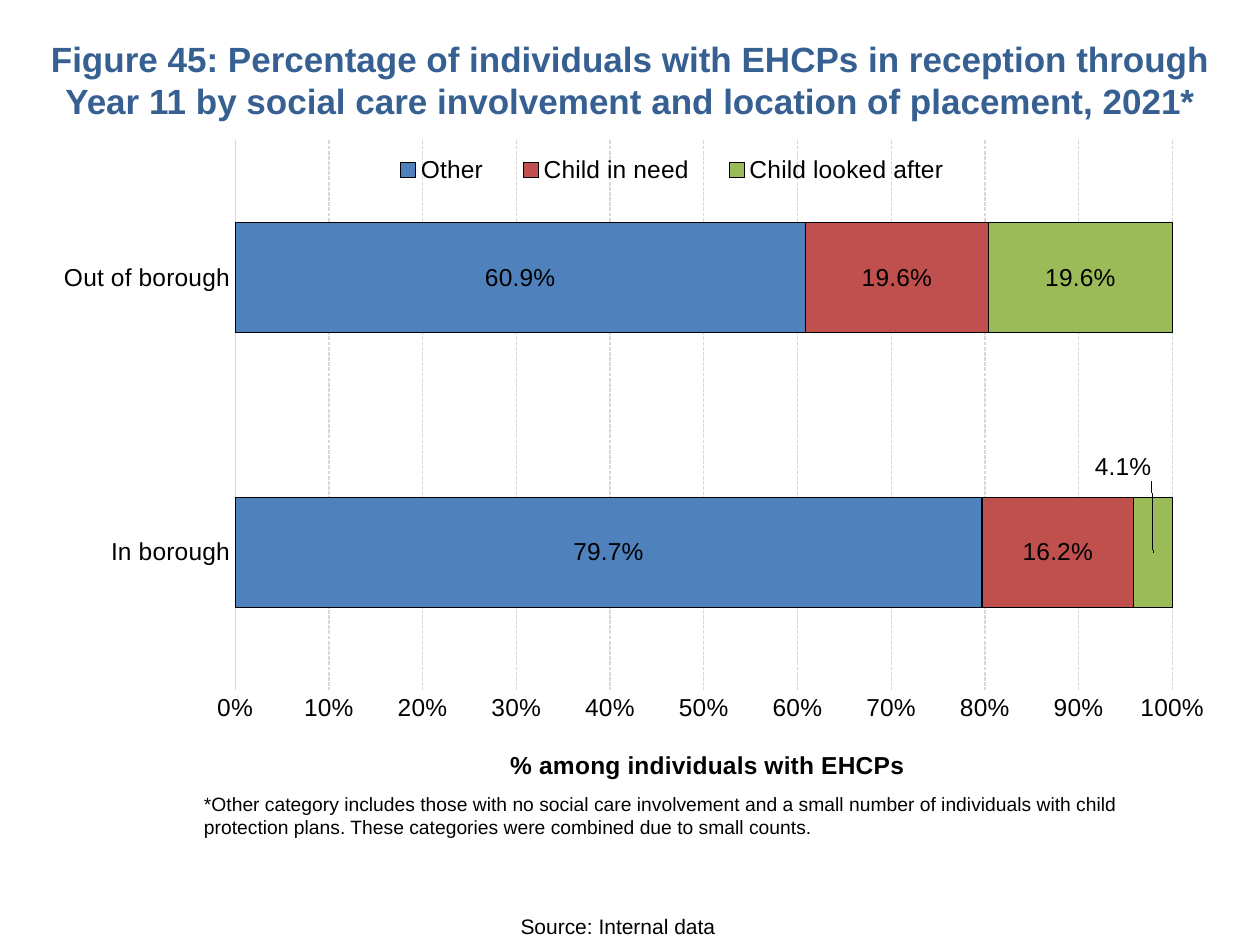
from lxml import etree
from pptx import Presentation
from pptx.chart.data import CategoryChartData
from pptx.dml.color import RGBColor
from pptx.enum.chart import (XL_CHART_TYPE, XL_LABEL_POSITION,
                             XL_LEGEND_POSITION, XL_TICK_MARK)
from pptx.enum.dml import MSO_LINE
from pptx.enum.text import MSO_ANCHOR, PP_ALIGN
from pptx.oxml.ns import qn
from pptx.util import Inches, Pt

STACKED = XL_CHART_TYPE.BAR_STACKED_100
CENTER = XL_LABEL_POSITION.CENTER
TOP = XL_LEGEND_POSITION.TOP
NONE = XL_TICK_MARK.NONE
DASH = MSO_LINE.SQUARE_DOT
MIDDLE, UPPER = MSO_ANCHOR.MIDDLE, MSO_ANCHOR.TOP
MID, LEFT = PP_ALIGN.CENTER, PP_ALIGN.LEFT


def style(font, size, color="000000", bold=False):
    values = {"name": "Arial", "size": Pt(size), "bold": bold}
    for key, value in values.items():
        setattr(font, key, value)
    font.color.rgb = RGBColor.from_string(color)


def place(part, index, **values):
    """Give a chart part a manual layout, as fractions of the chart."""
    for old in part.findall(qn("c:layout")):
        part.remove(old)
    layout = etree.Element(qn("c:layout"))
    manual = etree.SubElement(layout, qn("c:manualLayout"))
    for key, value in values.items():
        etree.SubElement(manual, qn("c:" + key), val=str(value))
    part.insert(index, layout)


deck = Presentation()
deck.slide_width, deck.slide_height = Inches(10), Inches(7.5)
slide = deck.slides.add_slide(deck.slide_layouts[5])

# Title
title = slide.shapes.title
box = {"left": 0.28, "top": 0.25, "width": 9.45, "height": 0.76}
for key, value in box.items():
    setattr(title, key, Inches(value))
frame = title.text_frame
frame.text = ("Figure 45: Percentage of individuals with EHCPs in reception "
              "through Year 11 by social care involvement and location of "
              "placement, 2021*")
frame.vertical_anchor = MIDDLE
frame.paragraphs[0].alignment = MID
style(frame.paragraphs[0].runs[0].font, 20, "376092", True)

# Source and footnote
notes = [
    ("Source: Internal data", (3.22, 7.2, 3.37, 0.3), 12, MID, MIDDLE),
    ("*Other category includes those with no social care involvement and a "
     "small number of individuals with child protection plans. These "
     "categories were combined due to small counts.",
     (1.52, 6.24, 7.62, 0.47), 11, LEFT, UPPER),
]
for text, area, size, align, anchor in notes:
    frame = slide.shapes.add_textbox(*map(Inches, area)).text_frame
    frame.word_wrap = True
    frame.vertical_anchor = anchor
    frame.text = text
    frame.paragraphs[0].alignment = align
    style(frame.paragraphs[0].runs[0].font, size)

# Chart data
groups = [("Other", (0.797, 0.609), "4F81BD"),
          ("Child in need", (0.162, 0.196), "C0504D"),
          ("Child looked after", (0.041, 0.196), "9BBB59")]
data = CategoryChartData(number_format="0.0%")
data.categories = ["In borough", "Out of borough"]
for name, values, color in groups:
    data.add_series(name, values)
area = map(Inches, (0.28, 0.95, 9.45, 5.31))
chart = slide.shapes.add_chart(STACKED, *area, data).chart
root = chart.element if hasattr(chart, "element") else chart._chartSpace
style(chart.font, 10)
chart.has_title = False
plot = chart.plots[0]
plot.gap_width, plot.overlap = 150, 100
plot.vary_by_categories = False
place(root.xpath("c:chart/c:plotArea")[0], 0, layoutTarget="inner",
      xMode="edge", yMode="edge", x=0.168, y=0.031, w=0.787, h=0.821)

# Bars and their labels
for bars, (name, values, color) in zip(plot.series, groups):
    bars.format.fill.solid()
    bars.format.fill.fore_color.rgb = RGBColor.from_string(color)
    bars.format.line.color.rgb = RGBColor.from_string("000000")
    bars.format.line.width = Pt(0.75)
    labels = bars.data_labels
    form = {"show_value": True, "position": CENTER, "number_format": "0.0%",
            "number_format_is_linked": False}
    for key, value in form.items():
        setattr(labels, key, value)
    style(labels.font, 14)

# The narrow bar has its label above it
label = plot.series[2].points[0].data_label
style(label.font, 14)
label.position = CENTER
mark = root.xpath(".//c:dLbl")[0]
mark.insert(1, etree.Element(qn("c:numFmt"), formatCode="0.0%",
                             sourceLinked="0"))
place(mark, 1, x=-0.025, y=-0.127)

# Axes
side, base = chart.category_axis, chart.value_axis
for axis in (side, base):
    axis.major_tick_mark = axis.minor_tick_mark = NONE
    style(axis.tick_labels.font, 14)
base.minimum_scale, base.maximum_scale, base.major_unit = 0, 1, 0.1
base.tick_labels.number_format = "0%"
base.tick_labels.number_format_is_linked = False
base.has_major_gridlines = True
grid = base.major_gridlines.format.line
for line in (side.format.line, grid):
    line.color.rgb = RGBColor.from_string("D9D9D9")
    line.width = Pt(0.75)
grid.dash_style = DASH
base.format.line.fill.background()

# Axis title
frame = base.axis_title.text_frame
frame.text = "% among individuals with EHCPs"
style(frame.paragraphs[0].runs[0].font, 14, bold=True)
place(root.xpath(".//c:valAx/c:title")[0], 1, xMode="edge", yMode="edge",
      x=0.395, y=0.935)

# Legend over the top of the plot
chart.has_legend = True
legend = chart.legend
legend.position = TOP
legend.include_in_layout = False
style(legend.font, 14)
place(root.xpath("c:chart/c:legend")[0], 1, xMode="edge", yMode="edge",
      x=0.28, y=0.04, w=0.51, h=0.07)

deck.save("out.pptx")
